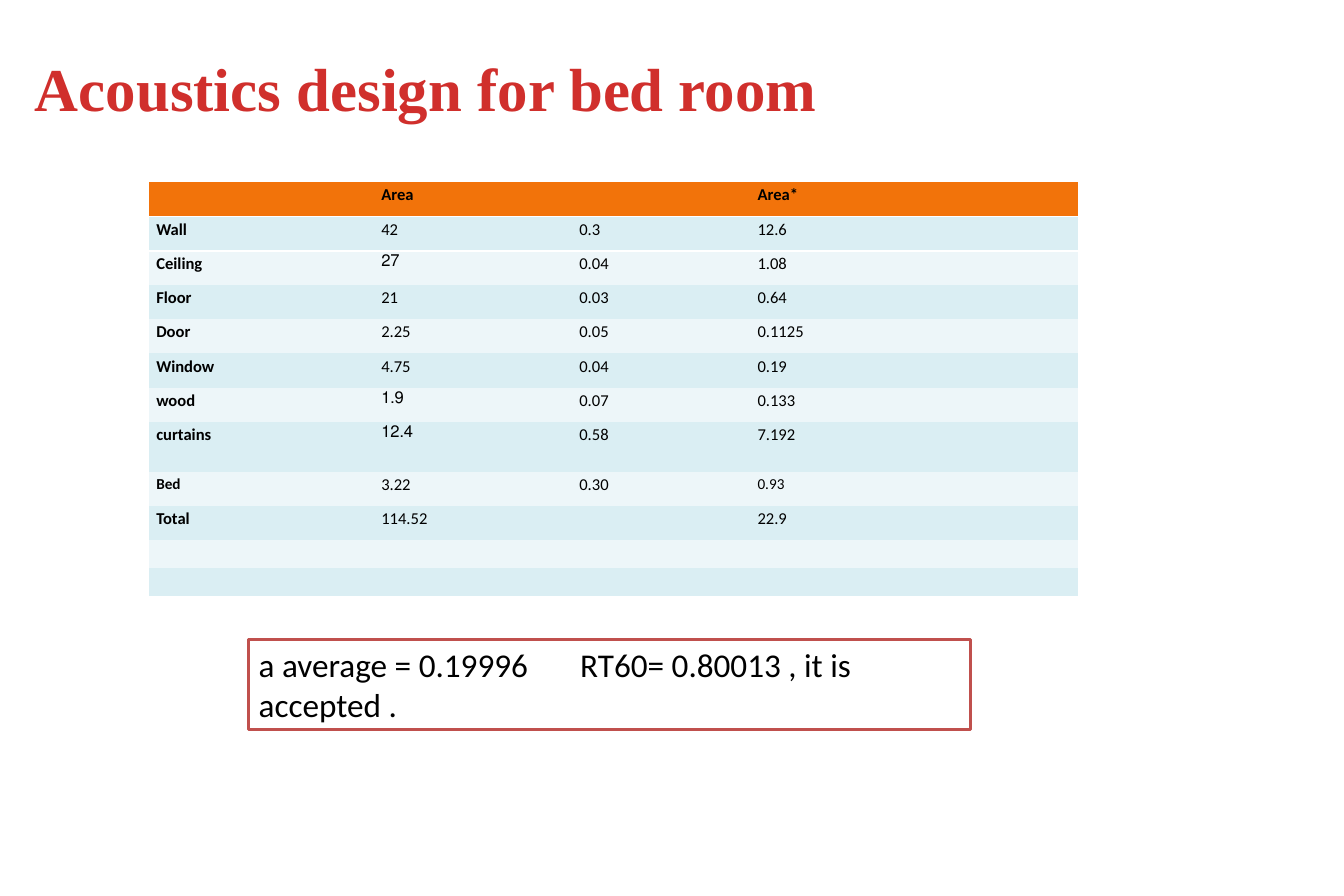
"""Build the bed room acoustics slide with its absorption table and result box."""
import pptx
import pptx.dml.color
import pptx.enum.shapes
import pptx.enum.text
import pptx.oxml
import pptx.oxml.ns
import pptx.util
from dataclasses import dataclass
from lxml import etree
from pptx.util import Inches


@dataclass(frozen=True)
class Theme:
    title_font: str = "Times New Roman"
    body_font: str = "Calibri"
    title: str = "D02F2C"
    text: str = "000000"
    white: str = "FFFFFF"
    outline: str = "C0504D"
    header: str = "F2730A"
    bands: tuple = ("EDF6F9", "DAEEF3")
    title_size: int = 44
    result_size: int = 24
    table_size: int = 12
    small_size: int = 11


theme = Theme()
qn = pptx.oxml.ns.qn


def rgb(value):
    return pptx.dml.color.RGBColor.from_string(value)


def format_runs(paragraph, font, size, color, bold=False):
    for span in paragraph.runs:
        span.font.name = font
        span.font.size = pptx.util.Pt(size)
        span.font.bold = bold
        span.font.color.rgb = rgb(color)


deck = pptx.Presentation()
deck.slide_width, deck.slide_height = Inches(13.5), Inches(9)
page = deck.slides.add_slide(deck.slide_layouts[5])
page.background.fill.solid()
page.background.fill.fore_color.rgb = rgb(theme.white)

title = page.shapes.title
title.left, title.top = Inches(0.25), Inches(0.25)
title.width, title.height = Inches(9.6), Inches(1.25)
title.text_frame.text = "Acoustics design for bed room"
title.text_frame.vertical_anchor = pptx.enum.text.MSO_ANCHOR.MIDDLE
title.text_frame.paragraphs[0].alignment = pptx.enum.text.PP_ALIGN.LEFT
format_runs(title.text_frame.paragraphs[0], theme.title_font, theme.title_size, theme.title, True)

result = page.shapes.add_shape(
    pptx.enum.shapes.MSO_SHAPE.RECTANGLE, Inches(2.5), Inches(6.42), Inches(7.25), Inches(0.91)
)
result.shadow.inherit = False
result.fill.solid()
result.fill.fore_color.rgb = rgb(theme.white)
result.line.color.rgb = rgb(theme.outline)
result.line.width = pptx.util.Pt(2)
frame = result.text_frame
frame.word_wrap = True
frame.auto_size = pptx.enum.text.MSO_AUTO_SIZE.SHAPE_TO_FIT_TEXT
frame.vertical_anchor = pptx.enum.text.MSO_ANCHOR.TOP
frame.text = "a average = 0.19996\tRT60= 0.80013 , it is accepted ."
para = frame.paragraphs[0]
para.alignment = pptx.enum.text.PP_ALIGN.LEFT
format_runs(para, theme.body_font, theme.result_size, theme.text)
tabs = etree.SubElement(para._p.get_or_add_pPr(), qn("a:tabLst"))
etree.SubElement(tabs, qn("a:tab"), pos=str(Inches(3.23)), algn="l")

rows = [
    ("", "Area", "", "Area*"),
    ("Wall", "42", "0.3", "12.6"),
    ("Ceiling", "27", "0.04", "1.08"),
    ("Floor", "21", "0.03", "0.64"),
    ("Door", "2.25", "0.05", "0.1125"),
    ("Window", "4.75", "0.04", "0.19"),
    ("wood", "1.9", "0.07", "0.133"),
    ("curtains", "12.4", "0.58", "7.192"),
    ("Bed", "3.22", "0.30", "0.93"),
    ("Total", "114.52", "", "22.9"),
    ("", "", "", ""),
    ("", "", "", ""),
]
widths = (2.26, 1.99, 1.79, 3.29)
special_heights = {7: 0.5, 10: 0.28, 11: 0.28}
table_height = 4.16
row_height = (table_height - sum(special_heights.values())) / (len(rows) - len(special_heights))
right_to_left = ("27", "1.9", "12.4")
small_texts = ("Bed", "0.93")

table = page.shapes.add_table(
    len(rows), len(widths), Inches(1.5), Inches(1.83), Inches(sum(widths)), Inches(table_height)
).table
table._tbl.tblPr.find(qn("a:tableStyleId")).text = "{2D5ABB26-0587-4C30-8999-92F81FD0307C}"
for column, width in zip(table.columns, widths):
    column.width = Inches(width)

for row_index, row in enumerate(rows):
    table.rows[row_index].height = Inches(special_heights.get(row_index, row_height))
    for column_index, text in enumerate(row):
        cell = table.cell(row_index, column_index)
        cell.margin_left = cell.margin_right = Inches(0.07)
        cell.margin_top = cell.margin_bottom = 0
        cell.fill.solid()
        cell.fill.fore_color.rgb = rgb(theme.bands[row_index % 2] if row_index else theme.header)
        para = cell.text_frame.paragraphs[0]
        if text:
            para.text = text
            para.line_spacing = 1.15
            para.alignment = pptx.enum.text.PP_ALIGN.LEFT
            size = theme.small_size if text in small_texts else theme.table_size
            bold = row_index == 0 or column_index == 0
            format_runs(para, theme.body_font, size, theme.text, bold)
            if text in right_to_left:
                para._p.get_or_add_pPr().set("rtl", "1")
        else:
            etree.SubElement(para._p, qn("a:endParaRPr"), sz=str(theme.table_size * 100))
        if row_index < 2:
            edge = etree.Element(qn("a:lnT" if row_index else "a:lnB"), w=str(pptx.util.Pt(1.5)))
            paint = etree.SubElement(edge, qn("a:solidFill"))
            etree.SubElement(paint, qn("a:srgbClr"), val=theme.white)
            cell._tc.get_or_add_tcPr().insert(0, edge)

deck.save("out.pptx")
